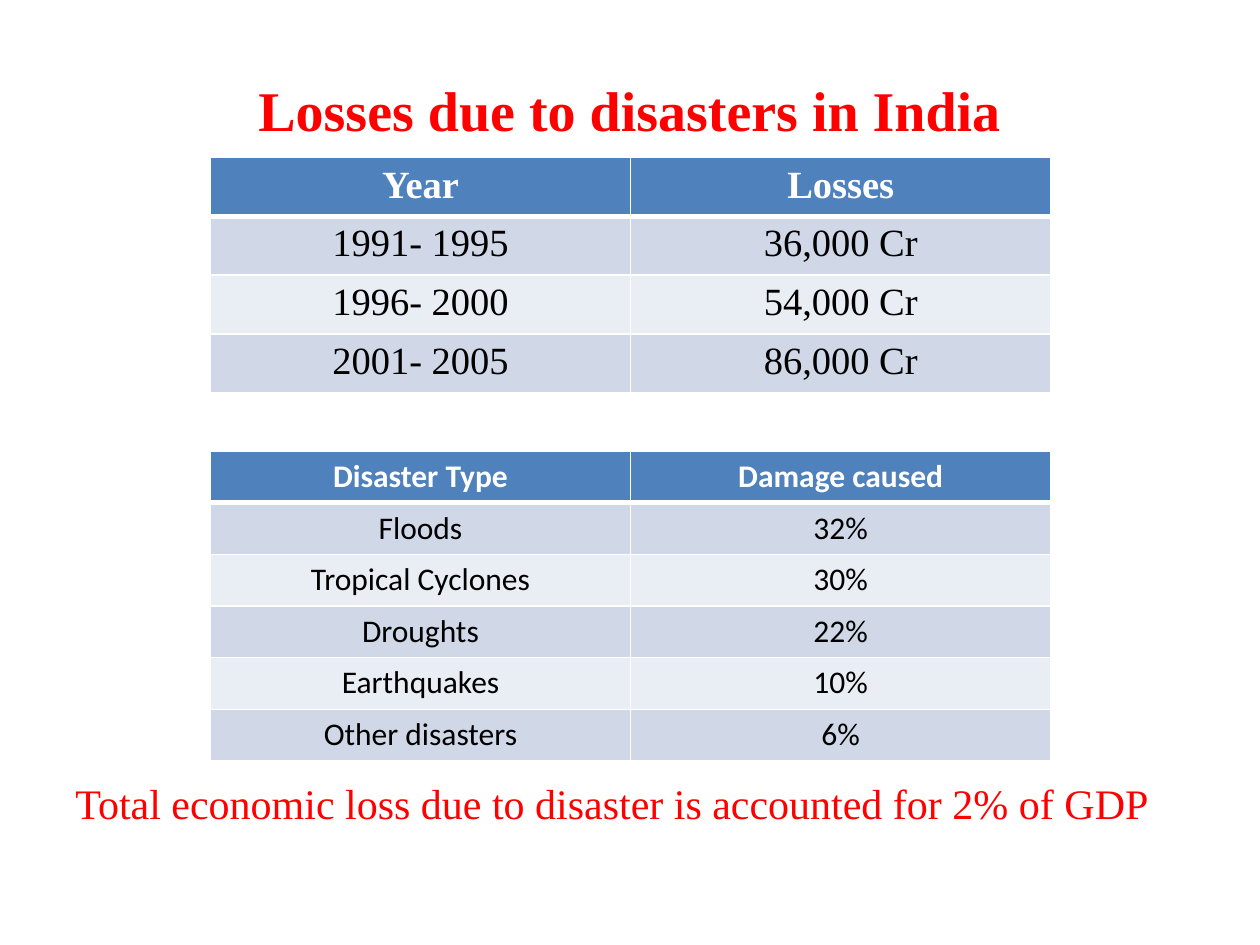
from dataclasses import dataclass

from lxml.etree import SubElement
from pptx import Presentation
from pptx.dml.color import RGBColor as Color
from pptx.enum.text import PP_ALIGN as Align
from pptx.oxml.ns import qn
from pptx.util import Inches, Pt


@dataclass(frozen=True)
class Theme:
    serif: str = "Times New Roman"
    sans: str = "Calibri"
    accent: str = "FF0000"
    header: str = "4F81BD"
    bands: tuple = ("D0D8E8", "E9EDF4")
    light: str = "FFFFFF"
    dark: str = "000000"
    title_size: int = 32
    note_size: int = 24
    losses_size: int = 22
    damage_size: int = 18


class SlideBuilder:
    def __init__(self, slide, theme):
        self.slide = slide
        self.theme = theme

    def add_run(self, paragraph, text, size, font, color, bold):
        run = paragraph.add_run()
        run.text = text
        run.font.size = Pt(size)
        run.font.name = font
        run.font.bold = bold
        run.font.color.rgb = Color.from_string(color)

    def text(self, text, top, height, size, align, bold=False):
        shape = self.slide.shapes.add_textbox(
            Inches(0.5), Inches(top), Inches(9), Inches(height))
        shape.text_frame.word_wrap = True
        paragraph = shape.text_frame.paragraphs[0]
        paragraph.alignment = align
        self.add_run(paragraph, text, size, self.theme.serif,
                     self.theme.accent, bold)

    def borders(self, cell, is_header, below_header):
        properties = cell._tc.get_or_add_tcPr()
        widths = {"lnL": 1, "lnR": 1, "lnT": 3 if below_header else 1,
                  "lnB": 3 if is_header else 1}
        for position, (side, width) in enumerate(widths.items()):
            line = SubElement(properties, qn(f"a:{side}"), w=str(Pt(width)))
            fill = SubElement(line, qn("a:solidFill"))
            SubElement(fill, qn("a:srgbClr"), val=self.theme.light)
            # Borders come before the cell fill
            properties.insert(position, line)

    def table(self, rows, top, size, font):
        theme = self.theme
        table = self.slide.shapes.add_table(
            len(rows), len(rows[0]), Inches(1.67), Inches(top),
            Inches(6.67), Inches(0.41 * len(rows))).table
        for row, values in enumerate(rows):
            is_header = row == 0
            background = theme.header if is_header else theme.bands[(row - 1) % 2]
            color = theme.light if is_header else theme.dark
            for column, value in enumerate(values):
                cell = table.cell(row, column)
                cell.fill.solid()
                cell.fill.fore_color.rgb = Color.from_string(background)
                self.borders(cell, is_header, row == 1)
                paragraph = cell.text_frame.paragraphs[0]
                paragraph.alignment = Align.CENTER
                self.add_run(paragraph, value, size, font, color, is_header)


def main():
    presentation = Presentation()
    presentation.slide_width = Inches(10)
    presentation.slide_height = Inches(7.5)
    theme = Theme()
    slide = presentation.slides.add_slide(presentation.slide_layouts[6])
    builder = SlideBuilder(slide, theme)

    # Title
    builder.text("Losses due to disasters in India", 0.55, 0.61,
                 theme.title_size, Align.CENTER, bold=True)

    # Losses by period
    builder.table([
        ("Year", "Losses"),
        ("1991- 1995", "36,000 Cr"),
        ("1996- 2000", "54,000 Cr"),
        ("2001- 2005", "86,000 Cr"),
    ], 1.25, theme.losses_size, theme.serif)

    # Damage by disaster type
    builder.table([
        ("Disaster Type", "Damage caused"),
        ("Floods", "32%"),
        ("Tropical Cyclones", "30%"),
        ("Droughts", "22%"),
        ("Earthquakes", "10%"),
        ("Other disasters", "6%"),
    ], 3.58, theme.damage_size, theme.sans)

    # Closing statement
    builder.text("Total economic loss due to disaster is accounted for 2% of GDP",
                 6.12, 0.48, theme.note_size, Align.JUSTIFY)

    presentation.save("out.pptx")


if __name__ == "__main__":
    main()
